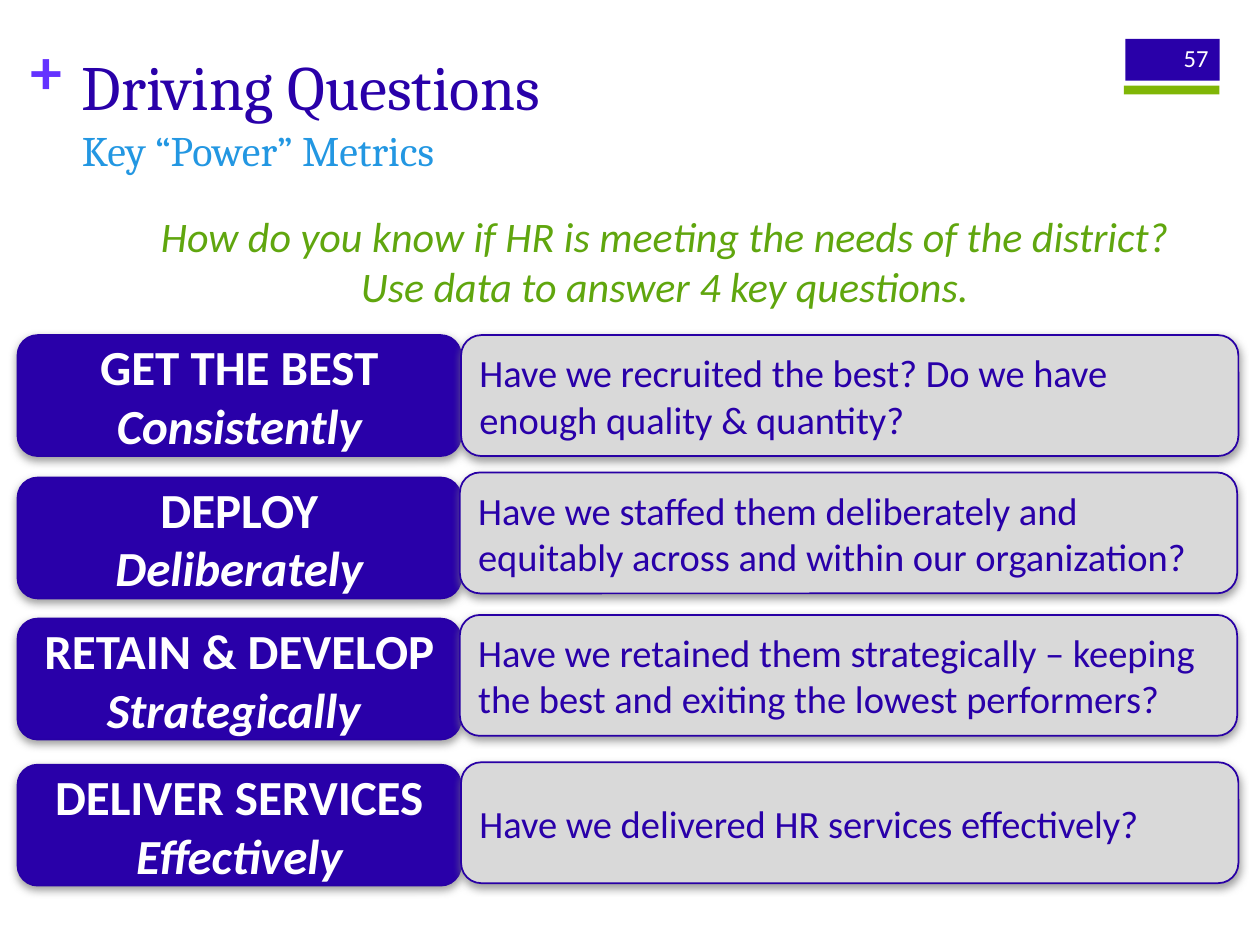
from lxml.etree import SubElement
from pptx import Presentation
from pptx.dml.color import RGBColor
from pptx.enum.shapes import MSO_SHAPE
from pptx.enum.text import MSO_ANCHOR, MSO_AUTO_SIZE, PP_ALIGN
from pptx.oxml import parse_xml
from pptx.oxml.ns import nsdecls, qn
from pptx.util import Pt

INDIGO = RGBColor(0x29, 0x00, 0xA9)
OUTLINE = RGBColor(0x28, 0x00, 0xA5)
VIOLET = RGBColor(0x64, 0x32, 0xFF)
LIME = RGBColor(0x80, 0xB6, 0x06)
GREEN = RGBColor(0x60, 0xA6, 0x0E)
SKY = RGBColor(0x23, 0x97, 0xE2)
GREY = RGBColor(0xD9, 0xD9, 0xD9)
WHITE = RGBColor(0xFF, 0xFF, 0xFF)

SHADOW = (
    f'<a:effectLst {nsdecls("a")}><a:outerShdw blurRad="63500" dist="25400" '
    'dir="5400000" rotWithShape="0"><a:srgbClr val="808080">'
    '<a:alpha val="75000"/></a:srgbClr></a:outerShdw></a:effectLst>'
)


def write(shape, *texts, size, color, font="Calibri", align=PP_ALIGN.LEFT,
          anchor=MSO_ANCHOR.TOP, bold=False, italics=(False, False), indent=0):
    """Put the texts into one unbulleted paragraph, one run for each text."""
    frame = shape.text_frame
    frame.word_wrap = True
    frame.auto_size = MSO_AUTO_SIZE.NONE
    frame.vertical_anchor = anchor
    para = frame.paragraphs[0]
    para.alignment = align
    para.space_before = Pt(0)
    properties = para._p.get_or_add_pPr()
    properties.set("marL", "0")
    properties.set("indent", str(Pt(indent)))
    SubElement(properties, qn("a:buNone"))
    for text, italic in zip(texts, italics):
        if text == "\n":
            para.add_line_break()
            continue
        span = para.add_run()
        span.text = text
        span.font.name = font
        span.font.size = Pt(size)
        span.font.color.rgb = color
        span.font.bold = bold
        span.font.italic = italic


def add_block(kind, left, top, width, height, fill, raised=False):
    """Add a filled shape, with outline and soft shadow when raised."""
    block = page.shapes.add_shape(kind, Pt(left), Pt(top), Pt(width), Pt(height))
    block.fill.solid()
    block.fill.fore_color.rgb = fill
    block.shadow.inherit = False
    if raised:
        block.line.color.rgb = OUTLINE
        block.line.width = Pt(1)
        properties = block._element.spPr
        properties.replace(properties.find(qn("a:effectLst")), parse_xml(SHADOW))
    else:
        block.line.fill.background()
    return block


deck = Presentation()
deck.slide_width, deck.slide_height = Pt(720), Pt(540)
page = deck.slides.add_slide(deck.slide_layouts[3])
title, question, subtitle = page.placeholders

# Plus sign and page number tab
plus = page.shapes.add_textbox(Pt(17.3), Pt(18), Pt(21), Pt(44))
frame = plus.text_frame
frame.margin_left = frame.margin_right = frame.margin_top = frame.margin_bottom = 0
write(plus, "+", size=36, color=VIOLET, bold=True)
add_block(MSO_SHAPE.RECTANGLE, 643, 22.3, 54, 23.8, INDIGO)
add_block(MSO_SHAPE.RECTANGLE, 642.2, 49, 54.7, 5, LIME)
number = page.shapes.add_textbox(Pt(653.8), Pt(18.7), Pt(43.9), Pt(28.8))
write(number, "57", size=14, color=WHITE, align=PP_ALIGN.RIGHT,
      anchor=MSO_ANCHOR.MIDDLE)

# Title, subtitle and leading question
for holder, left, top, width, height in (
    (title, 39.6, -4.3, 594.7, 78.5),
    (subtitle, 39.6, 67.7, 595.4, 61.2),
    (question, 39.6, 116.6, 680.4, 326.2),
):
    holder.left, holder.top = Pt(left), Pt(top)
    holder.width, holder.height = Pt(width), Pt(height)
write(title, "Driving Questions", size=36, color=INDIGO, font="Cambria",
      anchor=MSO_ANCHOR.BOTTOM)
write(subtitle, "Key “Power” Metrics", size=24, color=SKY, font="Cambria")
# The first line hangs out to the left of the second
write(question, "How do you know if HR is meeting the needs of the district?", "\n",
      "Use data to answer 4 key questions.", size=24, color=GREEN,
      align=PP_ALIGN.CENTER, italics=(True, True, True), indent=-61)

# Four goals, each with its question
ROWS = (
    (191.5, "GET THE BEST ", "Consistently", 263.5, 191.5,
     "Have we recruited the best? Do we have enough quality & quantity?"),
    (272.9, "DEPLOY ", "Deliberately", 262.8, 270,
     "Have we staffed them deliberately and equitably across and within our "
     "organization?"),
    (353.5, "RETAIN & DEVELOP ", "Strategically ", 262.8, 351.4,
     "Have we retained them strategically – keeping the best and exiting the "
     "lowest performers?"),
    (437, "DELIVER SERVICES ", "Effectively", 263.5, 435.6,
     "Have we delivered HR services effectively?"),
)
for goal_top, goal, manner, card_left, card_top, text in ROWS:
    pill = add_block(MSO_SHAPE.ROUNDED_RECTANGLE, 10, goal_top, 253.4, 69.1,
                     INDIGO, raised=True)
    write(pill, goal, manner, size=28, color=WHITE, bold=True,
          align=PP_ALIGN.CENTER, anchor=MSO_ANCHOR.MIDDLE, italics=(False, True))
    card = add_block(MSO_SHAPE.ROUNDED_RECTANGLE, card_left, card_top, 444.2, 69.1,
                     GREY, raised=True)
    write(card, text, size=22, color=INDIGO, anchor=MSO_ANCHOR.MIDDLE)

deck.save("out.pptx")
